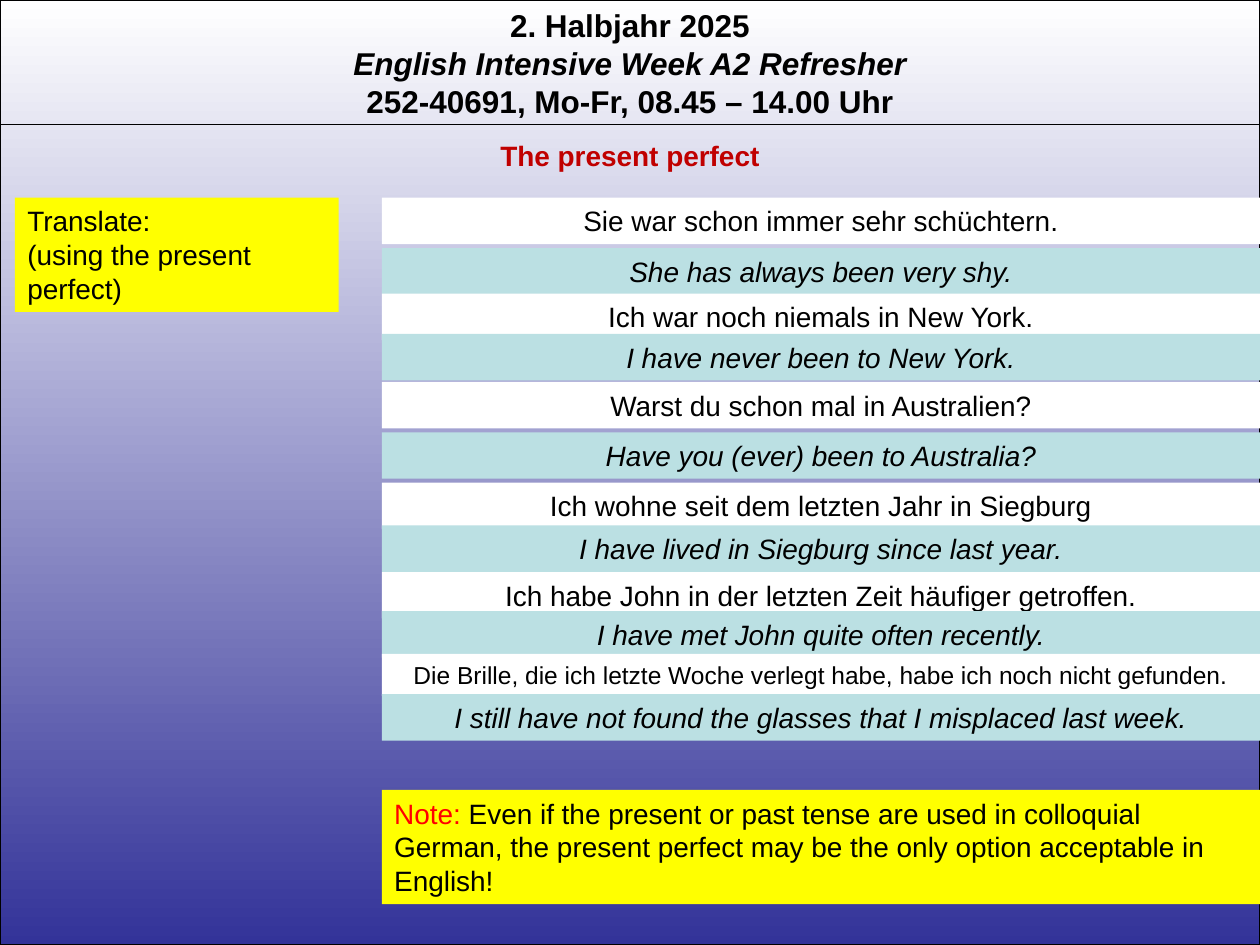
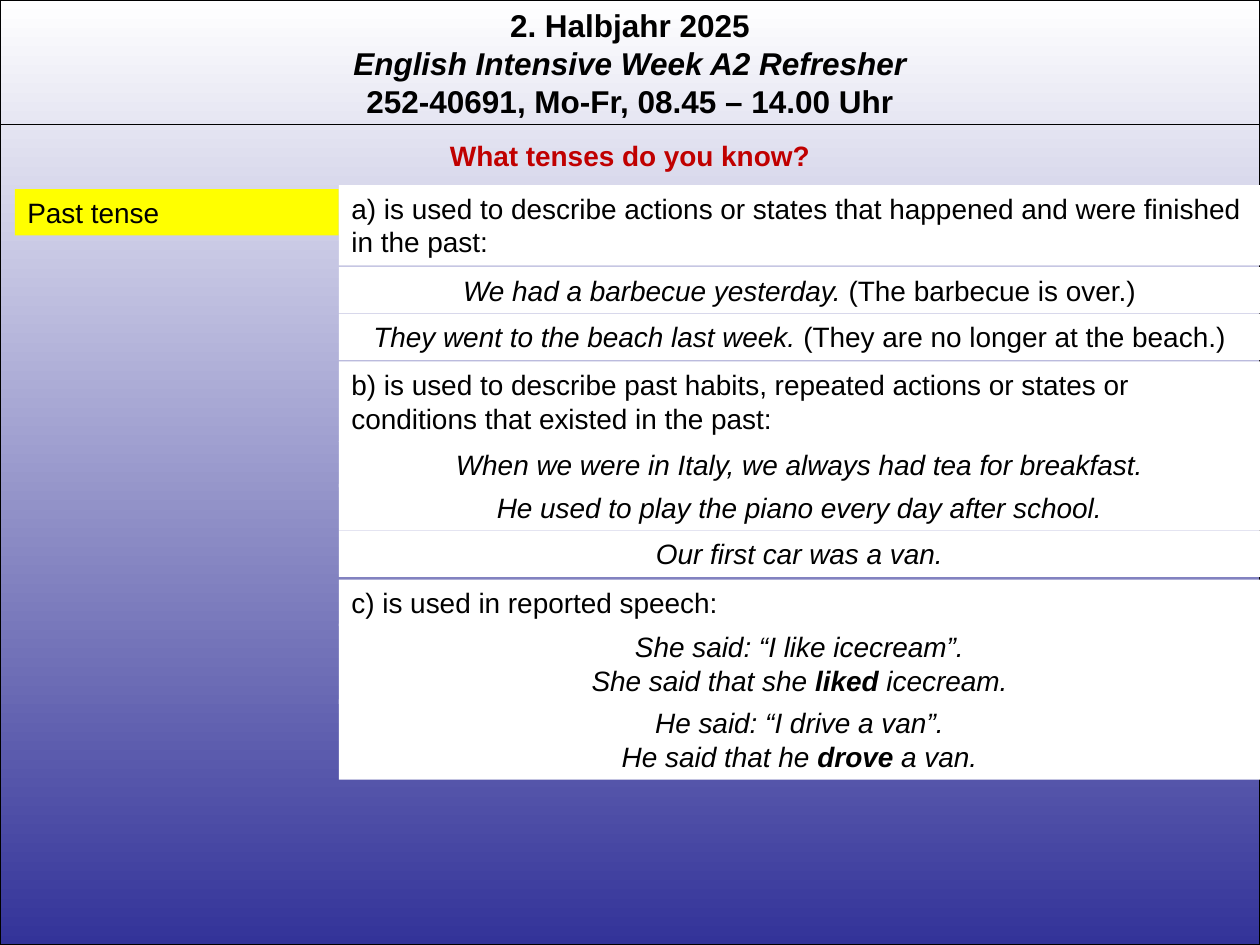
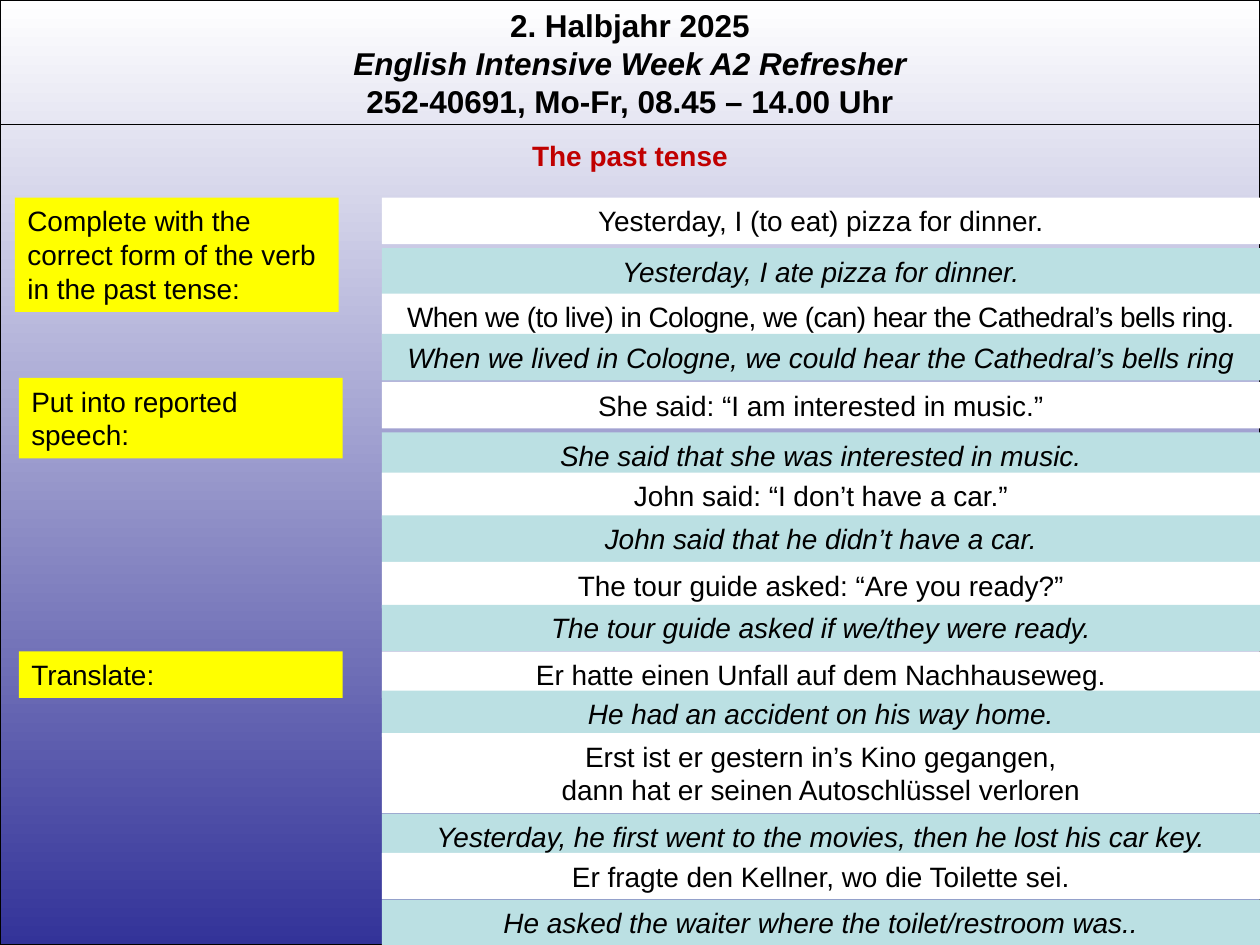
from lxml.etree import SubElement
from pptx import Presentation
from pptx.dml.color import RGBColor
from pptx.enum.shapes import MSO_CONNECTOR, MSO_SHAPE
from pptx.enum.text import MSO_ANCHOR, MSO_AUTO_SIZE, PP_ALIGN
from pptx.oxml.ns import qn
from pptx.util import Pt

WIDTH, HEIGHT = 720, 540
BLACK, WHITE, NAVY = "000000", "FFFFFF", "333399"
YELLOW, TEAL, DARK_RED, RED = "FFFF00", "BBE0E3", "C00000", "FF0000"
LEFT, CENTER = PP_ALIGN.LEFT, PP_ALIGN.CENTER
TASK_LEFT, TASK_WIDTH = 8.6, 185
EXERCISE_LEFT, RULE_LEFT = 218.2, 193.7

COURSE = [
    [("2. Halbjahr 2025", "b")],
    [("English Intensive Week A2 Refresher", "bi")],
    [("252-40691, Mo-Fr, 08.45 – 14.00 Uhr", "b")],
]


def rgb(color):
    return RGBColor.from_string(color)


def add_block(slide, left, top, width, paragraphs, lines=1, fill=None,
              align=CENTER, size=16, color=BLACK):
    """Add text as tall as its lines; a paragraph lists (text, "b"/"i" style) runs."""
    box = (Pt(left), Pt(top), Pt(width), Pt(7.2 + 1.21 * size * lines))
    if fill:
        block = slide.shapes.add_shape(MSO_SHAPE.RECTANGLE, *box)
        block.shadow.inherit = False
        block.fill.solid()
        block.fill.fore_color.rgb = rgb(fill)
        block.line.fill.background()
    else:
        block = slide.shapes.add_textbox(*box)
    frame = block.text_frame
    frame.word_wrap = True
    frame.auto_size = MSO_AUTO_SIZE.SHAPE_TO_FIT_TEXT
    frame.vertical_anchor = MSO_ANCHOR.TOP
    for index, runs in enumerate(paragraphs):
        paragraph = frame.add_paragraph() if index else frame.paragraphs[0]
        paragraph.alignment = align
        for text, style in runs:
            run = paragraph.add_run()
            run.text = text
            run.font.name = "Arial"
            run.font.size = Pt(size)
            run.font.bold = "b" in style
            run.font.italic = "i" in style
            run.font.color.rgb = rgb(color)
    return frame


prs = Presentation()
prs.slide_width, prs.slide_height = Pt(WIDTH), Pt(HEIGHT)

# Background, course header and topic of every slide
slides = []
for topic in ("The present perfect", "What tenses do you know?", "The past tense"):
    slide = prs.slides.add_slide(prs.slide_layouts[6])
    backdrop = slide.shapes.add_shape(MSO_SHAPE.RECTANGLE, 0, 0, Pt(WIDTH), Pt(HEIGHT))
    backdrop.shadow.inherit = False
    backdrop.fill.gradient()
    backdrop.fill.gradient_angle = 270
    for stop, color, position in zip(backdrop.fill.gradient_stops, (WHITE, NAVY), (0, 1)):
        stop.color.rgb = rgb(color)
        stop.position = position
    add_block(slide, 0, 0, WIDTH, COURSE, lines=3, size=18)
    header_rule = slide.shapes.add_connector(
        MSO_CONNECTOR.STRAIGHT, 0, Pt(71.3), Pt(WIDTH), Pt(71.3))
    SubElement(header_rule._element.spPr, qn("a:effectLst"))
    for outline in (backdrop.line, header_rule.line):
        outline.color.rgb = rgb(BLACK)
        outline.width = Pt(0.75)
    add_block(slide, 0, 75.6, WIDTH, [[(topic, "b")]], color=DARK_RED)
    slides.append(slide)
perfect_slide, tenses_slide, past_slide = slides

# Yellow task labels: slide, left, top, lines, paragraphs
tasks = [
    (perfect_slide, TASK_LEFT, 113, 3, ["Translate:", "(using the present perfect)"]),
    (tenses_slide, TASK_LEFT, 108, 1, ["Past tense"]),
    (past_slide, TASK_LEFT, 113, 3,
     ["Complete with the correct form of the verb in the past tense:"]),
    (past_slide, TASK_LEFT + 2.2, 216, 2, ["Put into reported speech:"]),
    (past_slide, TASK_LEFT + 2.2, 372.2, 1, ["Translate:"]),
]
for slide, left, top, lines, texts in tasks:
    add_block(slide, left, top, TASK_WIDTH, [[(text, "")] for text in texts],
              lines, YELLOW, LEFT)

# Exercises: question top, question, answer top, answer
perfect_exercises = [
    (113, "Sie war schon immer sehr schüchtern.",
     141.8, "She has always been very shy."),
    (167.8, "Ich war noch niemals in New York.",
     190.8, "I have never been to New York."),
    (218.2, "Warst du schon mal in Australien?",
     247, "Have you (ever) been to Australia?"),
    (275.8, "Ich wohne seit dem letzten Jahr in Siegburg",
     300.2, "I have lived in Siegburg since last year."),
    (326.9, "Ich habe John in der letzten Zeit häufiger getroffen.",
     349.2, "I have met John quite often recently."),
    (373.7, "Die Brille, die ich letzte Woche verlegt habe, habe ich noch nicht gefunden.",
     396.7, "I still have not found the glasses that I misplaced last week."),
]
past_exercises = [
    (113, "Yesterday, I (to eat) pizza for dinner.",
     141.8, "Yesterday, I ate pizza for dinner."),
    (167.8, "When we (to live) in Cologne, we (can) hear the Cathedral’s bells ring.",
     190.8, "When we lived in Cologne, we could hear the Cathedral’s bells ring"),
    (218.2, "She said: “I am interested in music.”",
     247, "She said that she was interested in music."),
    (270, "John said: “I don’t have a car.”",
     294.5, "John said that he didn’t have a car."),
    (321.1, "The tour guide asked: “Are you ready?”",
     345.6, "The tour guide asked if we/they were ready."),
    (372.2, "Er hatte einen Unfall auf dem Nachhauseweg.",
     394.6, "He had an accident on his way home."),
    (419, "Erst ist er gestern in’s Kino gegangen,\ndann hat er seinen Autoschlüssel verloren",
     465, "Yesterday, he first went to the movies, then he lost his car key."),
    (487.4, "Er fragte den Kellner, wo die Toilette sei.",
     514.1, "He asked the waiter where the toilet/restroom was.."),
]
exercise_width = WIDTH - EXERCISE_LEFT
for slide, exercises in ((perfect_slide, perfect_exercises), (past_slide, past_exercises)):
    for question_top, question, answer_top, answer in exercises:
        question_lines = question.split("\n")
        question_frame = add_block(
            slide, EXERCISE_LEFT, question_top, exercise_width,
            [[(line, "")] for line in question_lines], len(question_lines), WHITE,
            size=14 if len(question) > 75 and len(question_lines) == 1 else 16)
        if question.startswith("When we"):
            tight_run = question_frame.paragraphs[0].runs[0]
            tight_run._r.get_or_add_rPr().set("spc", "-30")
        add_block(slide, EXERCISE_LEFT, answer_top, exercise_width,
                  [[(answer, "i")]], fill=TEAL)

note = add_block(
    perfect_slide, EXERCISE_LEFT, 451.4, exercise_width,
    [[("Note: ", ""),
      ("Even if the present or past tense are used in colloquial German, the present "
       "perfect may be the only option acceptable in English!", "")]],
    3, YELLOW, LEFT)
note.paragraphs[0].runs[0].font.color.rgb = rgb(RED)

# Uses of the past tense: top, lines, alignment, paragraphs
past_uses = [
    (105.8, 2, LEFT, [[("a) is used to describe actions or states that happened and "
                        "were finished in the past:", "")]]),
    (152.6, 1, CENTER, [[("We had a barbecue yesterday. ", "i"),
                         ("(The barbecue is over.)", "")]]),
    (179.3, 1, CENTER, [[("They went to the beach last week. ", "i"),
                         ("(They are no longer at the beach.)", "")]]),
    (206.6, 2, LEFT, [[("b) is used to describe past habits, repeated actions or states "
                        "or conditions that existed in the past:", "")]]),
    (252, 1, CENTER, [[("When we were in Italy, we always had tea for breakfast.", "i")]]),
    (276.5, 1, CENTER, [[("He used to play the piano every day after school.", "i")]]),
    (303.1, 1, CENTER, [[("Our first car was a van.", "i")]]),
    (331.2, 1, LEFT, [[("c) is used in reported speech:", "")]]),
    (356.4, 2, CENTER, [[("She said: “I like icecream”.", "i")],
                        [("She said that she ", "i"), ("liked ", "bi"), ("icecream.", "i")]]),
    (399.6, 2, CENTER, [[("He said: “I drive a van”.", "i")],
                        [("He said that he ", "i"), ("drove", "bi"), (" a van.", "i")]]),
]
for top, lines, align, paragraphs in past_uses:
    add_block(tenses_slide, RULE_LEFT, top, WIDTH - RULE_LEFT, paragraphs,
              lines, WHITE, align)

prs.save("out.pptx")
